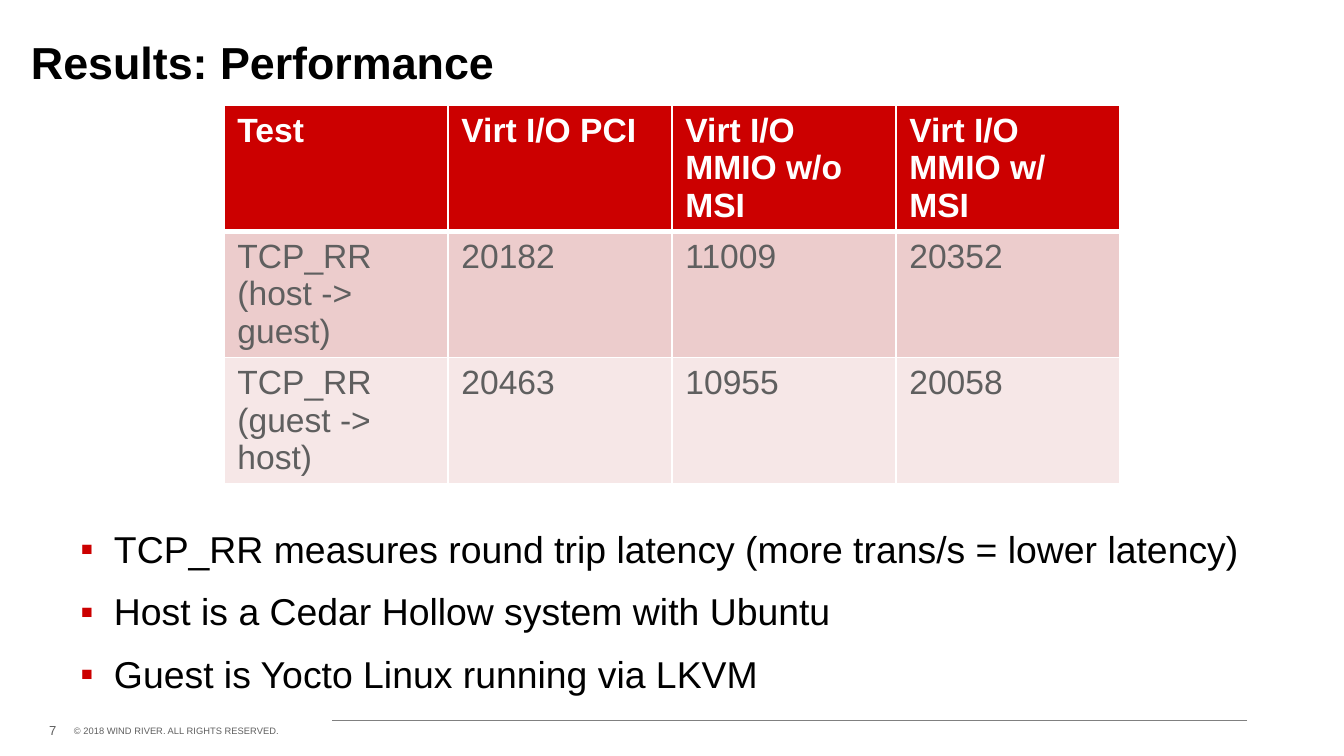
from lxml.etree import SubElement as Sub
from pptx import Presentation
from pptx.dml.color import RGBColor as RGB
from pptx.enum.shapes import MSO_CONNECTOR as Conn
from pptx.enum.text import MSO_ANCHOR as Anchor, MSO_AUTO_SIZE as Auto, PP_ALIGN as Align
from pptx.oxml.ns import qn
from pptx.util import Inches, Pt

WIDE = 10
HIGH = WIDE * 9 / 16
HUES = {"ink": "000000", "red": "CC0000", "gray": "5F5F5F", "rule": "808080",
        "white": "FFFFFF", "rose": "ECCCCC", "pale": "F6E7E7"}
ROWS = [
    ["Test", "Virt I/O PCI", "Virt I/O MMIO w/o MSI", "Virt I/O MMIO w/ MSI"],
    ["TCP_RR (host -> guest)", "20182", "11009", "20352"],
    ["TCP_RR (guest -> host)", "20463", "10955", "20058"],
]
POINTS = [
    "TCP_RR measures round trip latency (more trans/s = lower latency)",
    "Host is a Cedar Hollow system with Ubuntu",
    "Guest is Yocto Linux running via LKVM",
]


def hue(name):
    return RGB.from_string(HUES[name])


def add_mark(para):
    """Give the paragraph a red square bullet with a hanging indent."""
    props = para._p.get_or_add_pPr()
    props.set("marL", str(Inches(0.25)))
    props.set("indent", str(-Inches(0.25)))
    Sub(Sub(props, qn("a:buClr")), qn("a:srgbClr"), val=HUES["red"])
    Sub(props, qn("a:buFont"), typeface="Arial")
    Sub(props, qn("a:buChar"), char="▪")


def write(frame, *lines, size=18, color="ink", bold=False, align=Align.LEFT,
          lead=1.0, gap=0, mark=False, inset=None, anchor=Anchor.TOP, wrap=True):
    frame.word_wrap = wrap
    frame.vertical_anchor = anchor
    if inset is not None:
        frame.margin_left = frame.margin_right = Inches(inset)
        frame.margin_top = frame.margin_bottom = Inches(inset)
    for i, line in enumerate(lines):
        para = frame.add_paragraph() if i else frame.paragraphs[0]
        if mark:
            add_mark(para)
        para.alignment, para.line_spacing = align, lead
        para.space_before = Pt(gap if i else 0)
        run = para.add_run()
        run.text = line
        font = run.font
        font.name, font.size, font.bold = "Arial", Pt(size), bold
        font.color.rgb = hue(color)


def add_text(slide, box, *lines, **style):
    shape = slide.shapes.add_textbox(*map(Inches, box))
    write(shape.text_frame, *lines, **style)


def add_title(slide, box, text):
    title = slide.shapes.title
    title.left, title.top, title.width, title.height = map(Inches, box)
    title.text_frame.auto_size = Auto.NONE
    write(title.text_frame, text, size=24, bold=True, lead=0.9,
          inset=0, anchor=Anchor.BOTTOM)


def edge(cell, **widths):
    """Draw white cell borders; widths in points, keyed L, R, T, B."""
    props = cell._tc.get_or_add_tcPr()
    for side, width in widths.items():
        line = Sub(props, qn("a:ln" + side), w=str(Pt(width)))
        Sub(Sub(line, qn("a:solidFill")), qn("a:srgbClr"), val=HUES["white"])


def add_grid(slide, box, rows):
    table = slide.shapes.add_table(len(rows), len(rows[0]), *map(Inches, box)).table
    for r, row in enumerate(rows):
        fill = ("red", "rose", "pale")[r]
        for c, text in enumerate(row):
            cell = table.cell(r, c)
            write(cell.text_frame, text, bold=r == 0, color="gray" if r else "white")
            edge(cell, L=1, R=1, T=3 if r == 1 else 1, B=1 if r else 3)
            cell.fill.solid()
            cell.fill.fore_color.rgb = hue(fill)


def add_foot(slide, box):
    left, top, width, high = box
    style = dict(color="gray", inset=0, anchor=Anchor.MIDDLE, wrap=False)
    add_text(slide, (left, top, 0.12, high), "7", size=7, align=Align.RIGHT, **style)
    add_text(slide, (left + 0.25, top + 0.03, 1.54, 0.08),
             "© 2018 WIND RIVER. ALL RIGHTS RESERVED.", size=5, **style)
    ends = left + width, top - 0.01, left + 2.17, top - 0.01
    rule = slide.shapes.add_connector(Conn.STRAIGHT, *map(Inches, ends))
    rule.line.color.rgb, rule.line.width = hue("rule"), Pt(0.67)
    Sub(rule._element.spPr, qn("a:effectLst"))


def main():
    deck = Presentation()
    deck.slide_width, deck.slide_height = Inches(WIDE), Inches(HIGH)
    slide = deck.slides.add_slide(deck.slide_layouts[5])
    add_title(slide, (0.23, 0.29, 9.38, 0.37), "Results: Performance")
    add_grid(slide, (WIDE / 6, 0.78, WIDE * 2 / 3, HIGH / 2), ROWS)
    add_text(slide, (WIDE / 20, 3.9, WIDE * 0.9, 1.18), *POINTS,
             size=20, lead=0.9, gap=12, mark=True)
    add_foot(slide, (0.3, 5.37, 8.98, 0.13))
    deck.save("out.pptx")


if __name__ == "__main__":
    main()
